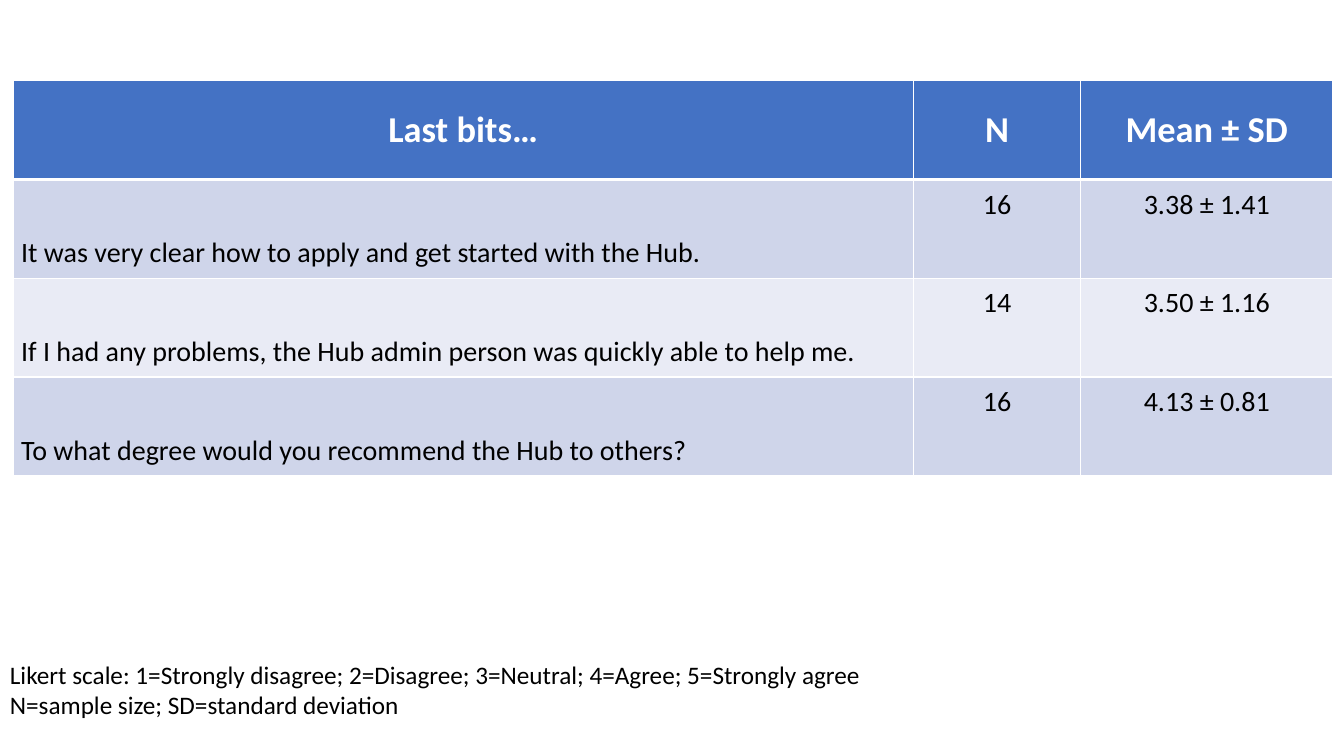
from lxml.etree import SubElement
from pptx import Presentation
from pptx.dml.color import RGBColor
from pptx.enum.text import MSO_ANCHOR as Anchor, MSO_AUTO_SIZE as Fit, PP_ALIGN as Align
from pptx.oxml.ns import qn
from pptx.util import Pt

PX = 9144
WHITE = RGBColor(0xFF, 0xFF, 0xFF)
BLACK = RGBColor(0, 0, 0)
BLUE = RGBColor(0x44, 0x72, 0xC4)
BANDS = RGBColor(0xCF, 0xD5, 0xEA), RGBColor(0xE9, 0xEB, 0xF5)
FONT = "Calibri"
COLS = 893, 166, 250
PAD = 8
ROWS = [
    ("Last bits…", "N", "Mean ± SD"),
    ("It was very clear how to apply and get started with the Hub.", "16", "3.38 ± 1.41"),
    ("If I had any problems, the Hub admin person was quickly able to help me.", "14", "3.50 ± 1.16"),
    ("To what degree would you recommend the Hub to others?", "16", "4.13 ± 0.81"),
]
NOTES = [
    "Likert scale: 1=Strongly disagree; 2=Disagree; 3=Neutral; 4=Agree; 5=Strongly agree",
    "N=sample size; SD=standard deviation",
]


def write(para, text, size=20, color=BLACK, bold=False, align=Align.LEFT):
    """Put formatted text in a paragraph."""
    para.alignment = align
    run = para.add_run()
    run.text = text
    font = run.font
    font.name, font.size, font.bold = FONT, Pt(size), bold
    font.color.rgb = color


def edge(cell, widths):
    """Draw white borders with widths in points for each side."""
    props = cell._tc.get_or_add_tcPr()
    for side, width in widths.items():
        line = SubElement(props, qn(f"a:ln{side}"), w=str(Pt(width)))
        fill = SubElement(line, qn("a:solidFill"))
        SubElement(fill, qn("a:srgbClr"), val=str(WHITE))


def style(cell, row, col):
    """Set the borders, fill, padding and anchor of a cell."""
    edge(cell, {"L": 1, "R": 1, "T": 3 if row == 1 else 1, "B": 1 if row else 3})
    cell.fill.solid()
    cell.fill.fore_color.rgb = BANDS[(row - 1) % 2] if row else BLUE
    cell.margin_left = cell.margin_right = PAD * PX
    cell.margin_top = cell.margin_bottom = PAD * PX
    if row == 0:
        cell.vertical_anchor = Anchor.MIDDLE
    else:
        cell.vertical_anchor = Anchor.TOP if col else Anchor.BOTTOM


def scores(slide, x, y, w, h):
    """Place the table of survey scores in its box."""
    frame = slide.shapes.add_table(len(ROWS), len(COLS), x * PX, y * PX, w * PX, h * PX)
    table = frame.table
    for col, width in zip(table.columns, COLS):
        col.width = width * PX
    for r, texts in enumerate(ROWS):
        table.rows[r].height = h * PX // len(ROWS)
        look = {} if r else {"size": 26, "color": WHITE, "bold": True}
        for c, text in enumerate(texts):
            cell = table.cell(r, c)
            style(cell, r, c)
            align = Align.LEFT if r and c == 0 else Align.CENTER
            write(cell.text_frame.paragraphs[0], text, align=align, **look)


def legend(slide, x, y, w, h):
    """Place the notes on the scale in their box."""
    frame = slide.shapes.add_textbox(x * PX, y * PX, w * PX, h * PX).text_frame
    frame.word_wrap = True
    frame.auto_size = Fit.SHAPE_TO_FIT_TEXT
    for i, note in enumerate(NOTES):
        para = frame.add_paragraph() if i else frame.paragraphs[0]
        write(para, note, size=18)


def main():
    """Build and save the slide."""
    deck = Presentation()
    deck.slide_width, deck.slide_height = 1333 * PX, 750 * PX
    slide = deck.slides.add_slide(deck.slide_layouts[6])
    scores(slide, 13, 80, sum(COLS), 392)
    legend(slide, 0, 649, 1242, 71)
    deck.save("out.pptx")


if __name__ == "__main__":
    main()
